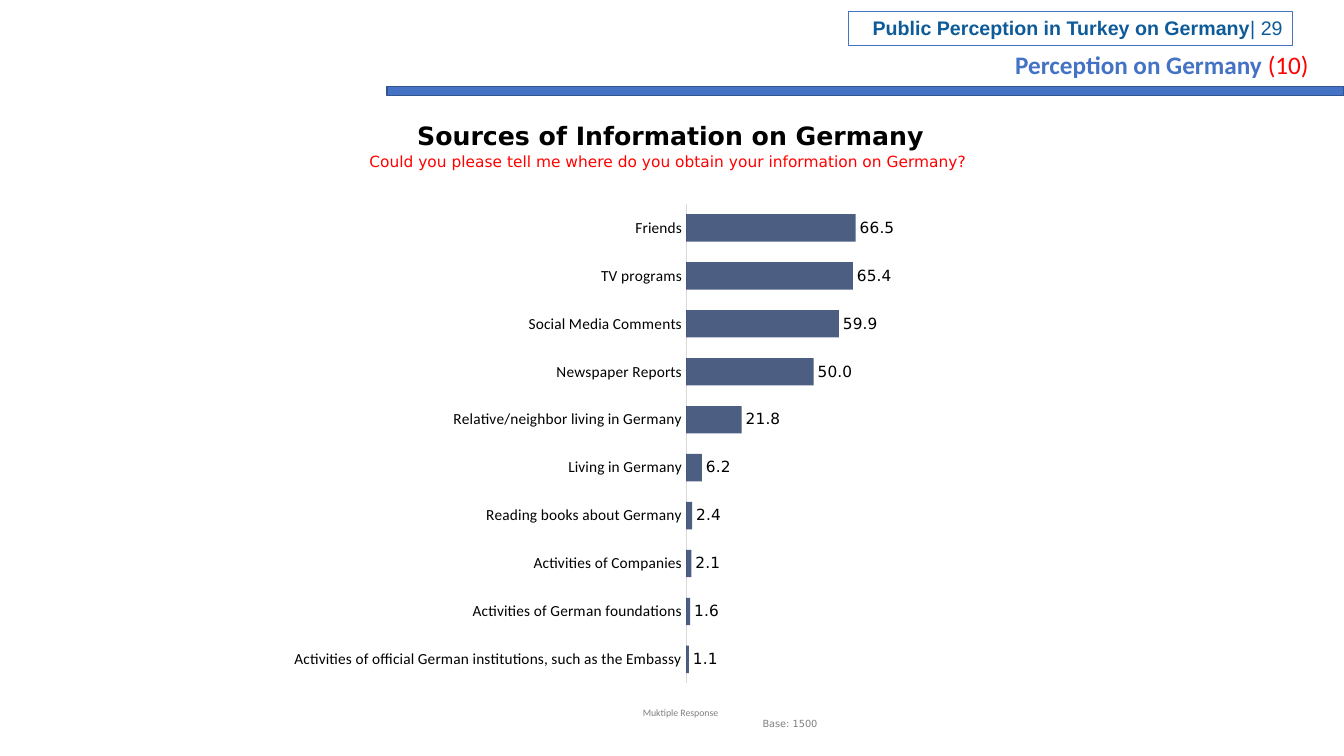
import pptx
import pptx.util
import pptx.dml.color
import pptx.chart.data
import pptx.enum.chart
import pptx.enum.shapes
import pptx.enum.text
import pptx.oxml
import pptx.oxml.ns

Inches = pptx.util.Inches
RGBColor = pptx.dml.color.RGBColor
Align = pptx.enum.text.PP_ALIGN
Anchor = pptx.enum.text.MSO_ANCHOR

BLUE = RGBColor(0x44, 0x72, 0xC4)
DARK_BLUE = RGBColor(0x32, 0x54, 0x91)
HEADER_BLUE = RGBColor(0x0E, 0x5B, 0x9A)
NAVY = RGBColor(0x20, 0x38, 0x64)
RED = RGBColor(0xFF, 0x00, 0x00)
BLACK = RGBColor(0x00, 0x00, 0x00)
GREY = RGBColor(0x80, 0x80, 0x80)
LIGHT_GREY = RGBColor(0xD9, 0xD9, 0xD9)

SOURCES = {
    "Friends": 66.5,
    "TV programs": 65.4,
    "Social Media Comments": 59.9,
    "Newspaper Reports": 50.0,
    "Relative/neighbor living in Germany": 21.8,
    "Living in Germany": 6.2,
    "Reading books about Germany": 2.4,
    "Activities of Companies": 2.1,
    "Activities of German foundations": 1.6,
    "Activities of official German institutions, such as the Embassy": 1.1,
}


def format_font(font, color, **values):
    font.color.rgb = color
    for name, value in values.items():
        setattr(font, name, pptx.util.Pt(value) if name == "size" else value)


def write_text(shape, spans, align, anchor=Anchor.TOP, wrap=True):
    """Fill a shape with one paragraph of (text, format) spans."""
    frame = shape.text_frame
    settings = {"word_wrap": wrap, "vertical_anchor": anchor,
                "auto_size": pptx.enum.text.MSO_AUTO_SIZE.SHAPE_TO_FIT_TEXT}
    for name, value in settings.items():
        setattr(frame, name, value)
    para = frame.paragraphs[0]
    para.alignment = align
    for text, values in spans:
        span = para.add_run()
        span.text = text
        format_font(span.font, **values)


def add_text(page, box, spans, align=Align.CENTER, **settings):
    shape = page.shapes.add_textbox(*map(Inches, box))
    write_text(shape, spans, align, **settings)


def add_rectangle(page, box, fill, line, weight):
    shape = page.shapes.add_shape(
        pptx.enum.shapes.MSO_SHAPE.RECTANGLE, *map(Inches, box))
    shape.shadow.inherit = False
    if fill is None:
        shape.fill.background()
    else:
        shape.fill.solid()
        shape.fill.fore_color.rgb = fill
    shape.line.color.rgb = line
    shape.line.width = pptx.util.Pt(weight)
    return shape


def add_header(page, left, top, width):
    # Rule across the page
    add_rectangle(page, (left, top + 0.86, width, 0.09), BLUE, DARK_BLUE, 1)

    # Framed report name and page number
    frame = add_rectangle(page, (left + 4.58, top + 0.11, 4.4, 0.34), None, BLUE, 0.75)
    style = {"name": "Arial", "size": 14, "color": HEADER_BLUE}
    write_text(frame, [("Public Perception in Turkey on Germany", {**style, "bold": True}),
                       ("| 29", {**style, "bold": False})], Align.RIGHT)

    # Section name
    style = {"name": "Calibri", "size": 18}
    add_text(page, (left + 6.13, top + 0.44, 3.26, 0.4),
             [("Perception on Germany ", {**style, "color": BLUE, "bold": True}),
              ("(10)", {**style, "color": RED, "bold": False})], Align.LEFT)


def add_headings(page, left, top, width):
    style = {"name": "DejaVu Sans"}
    add_text(page, (left + (width - 5.3) / 2, top, 5.3, 0.4),
             [("Sources of Information on Germany",
               {**style, "size": 18, "color": BLACK, "bold": True})], wrap=False)
    add_text(page, (left, top + 0.32, width, 0.29),
             [("Could you please tell me where do you obtain your information on Germany? ",
               {**style, "size": 11, "color": RED})], anchor=Anchor.MIDDLE)


def set_plot_area(chart, **fractions):
    """Pin the inner plot area to fractions of the chart."""
    plot_area = chart._chartSpace.chart.plotArea
    for old in plot_area.findall(pptx.oxml.ns.qn("c:layout")):
        plot_area.remove(old)
    parts = "".join(f'<c:{name} val="{value}"/>' for name, value in fractions.items())
    plot_area.insert(0, pptx.oxml.parse_xml(
        f'<c:layout {pptx.oxml.ns.nsdecls("c")}><c:manualLayout>'
        '<c:layoutTarget val="inner"/><c:xMode val="edge"/><c:yMode val="edge"/>'
        f'{parts}</c:manualLayout></c:layout>'))


def add_source_chart(page, box):
    data = pptx.chart.data.CategoryChartData(number_format="0.0")
    data.categories = list(SOURCES)
    data.add_series("Series 1", list(SOURCES.values()))
    kinds = pptx.enum.chart
    chart = page.shapes.add_chart(
        kinds.XL_CHART_TYPE.BAR_CLUSTERED, *map(Inches, box), data).chart
    chart.has_title = False
    chart.has_legend = False
    format_font(chart.font, BLACK, name="DejaVu Sans", size=11)
    set_plot_area(chart, x=0.517, y=0.013, w=0.34, h=0.969)

    # Axes
    axis = chart.category_axis
    axis.reverse_order = True
    axis.major_tick_mark = kinds.XL_TICK_MARK.NONE
    axis.format.line.color.rgb = LIGHT_GREY
    axis.format.line.width = pptx.util.Pt(0.75)
    format_font(axis.tick_labels.font, BLACK, name="Calibri", size=11)
    scale = {"minimum_scale": 0, "maximum_scale": 100,
             "has_major_gridlines": False, "visible": False}
    for name, value in scale.items():
        setattr(chart.value_axis, name, value)

    # Bars, slightly transparent
    plot = chart.plots[0]
    plot.gap_width = 75
    plot.vary_by_categories = False
    fill = plot.series[0].format.fill
    fill.solid()
    fill.fore_color.rgb = NAVY
    color = next(plot.series[0]._element.iter(pptx.oxml.ns.qn("a:srgbClr")))
    color.append(pptx.oxml.parse_xml(
        f'<a:alpha {pptx.oxml.ns.nsdecls("a")} val="80000"/>'))

    # Values at the bar ends
    plot.has_data_labels = True
    labels = plot.data_labels
    settings = {"show_value": True, "number_format": "0.0",
                "number_format_is_linked": False,
                "position": kinds.XL_LABEL_POSITION.OUTSIDE_END}
    for name, value in settings.items():
        setattr(labels, name, value)
    format_font(labels.font, BLACK, name="DejaVu Sans", size=11)


def add_footnotes(page, left, top):
    style = {"size": 7, "color": GREY}
    add_text(page, (left, top, 1.1, 0.22),
             [("Muktiple Response", {**style, "name": "Calibri"})])
    add_text(page, (left + 1.23, top + 0.11, 0.81, 0.22),
             [("Base: 1500", {**style, "name": "DejaVu Sans"})])


def main():
    deck = pptx.Presentation()
    deck.slide_width, deck.slide_height = Inches(13.33), Inches(7.5)
    page = deck.slides.add_slide(deck.slide_layouts[6])
    add_header(page, 3.84, 0, 9.49)
    add_source_chart(page, (2.92, 1.96, 7.48, 4.91))
    add_headings(page, 1.49, 1.14, 10.32)
    add_footnotes(page, 6.2, 6.96)
    deck.save("out.pptx")


if __name__ == "__main__":
    main()
